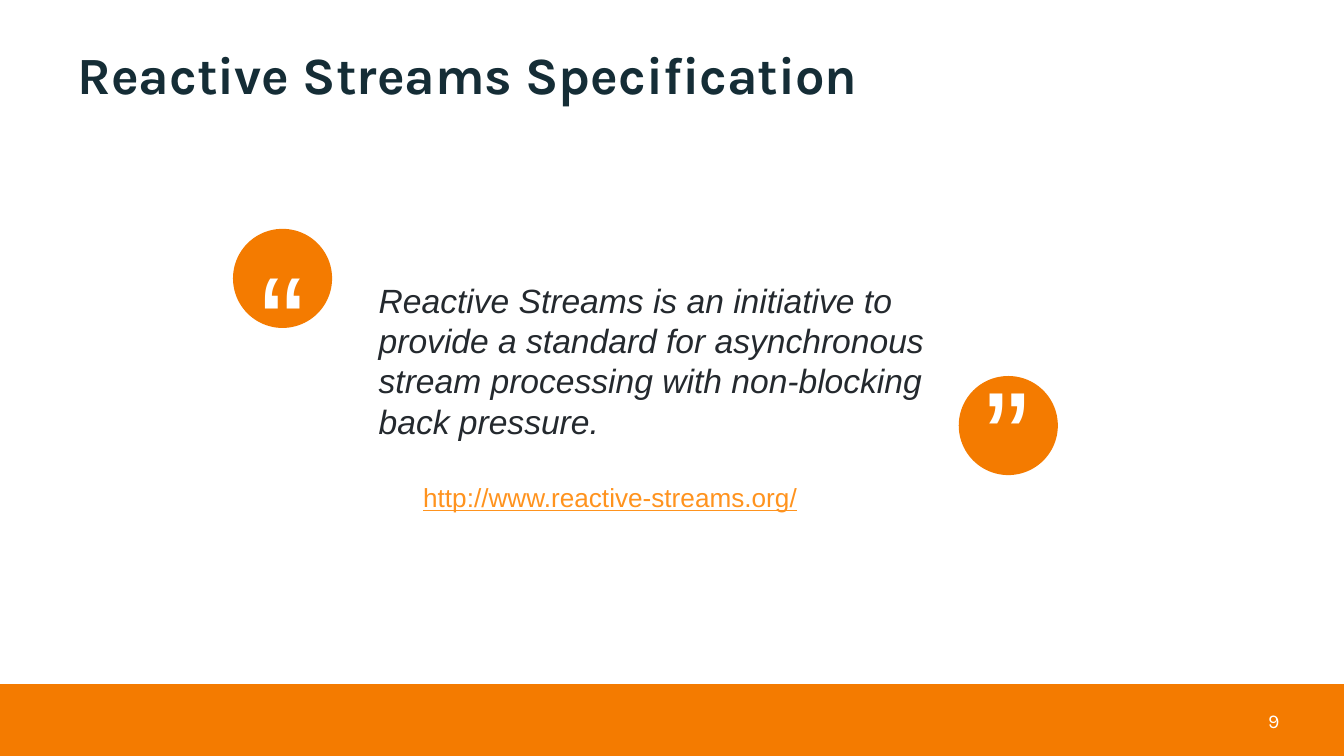
from pptx import Presentation
from pptx.dml.color import RGBColor
from pptx.enum.shapes import MSO_SHAPE
from pptx.enum.text import MSO_ANCHOR, PP_ALIGN
from pptx.util import Pt

RECTANGLE, OVAL = MSO_SHAPE.RECTANGLE, MSO_SHAPE.OVAL
TOP, MIDDLE = MSO_ANCHOR.TOP, MSO_ANCHOR.MIDDLE
LEFT, RIGHT = PP_ALIGN.LEFT, PP_ALIGN.RIGHT

COLORS = {"orange": "F47B00", "navy": "152D36", "ink": "24292E",
          "link": "FF931E", "white": "FFFFFF"}
PAGE_WIDTH, PAGE_HEIGHT = 720, 405
FOOTER_TOP = 366.5
INSET = 7.2
CIRCLE_SIZE = 53.1

# Text, place (left, top, width, height), look
TEXTS = [
    ("Reactive Streams Specification", (34.6, 18, 650.9, 46.8),
     dict(size=28, font="Karla", color="navy", bold=True, anchor=MIDDLE, spacing=0.9)),
    ("9", (523.4, 375.1, 162, 21.6),
     dict(size=10.5, font="Karla", color="white", anchor=MIDDLE, align=RIGHT, inset=0)),
    ("Reactive Streams is an initiative to provide a standard for asynchronous "
     "stream processing with non-blocking back pressure.", (195.8, 142.6, 317.5, 68.4),
     dict(size=18, color="ink", italic=True, spacing=Pt(21.6))),
    ("http://www.reactive-streams.org/", (219.6, 250.6, 222.5, 25.9),
     dict(size=14, color="link", underline=True, spacing=Pt(16.8))),
]

# Circle corner, corner of the mark's box, rotation
QUOTE_MARKS = [
    ((124.8, 122.6), (132.5, 113), 0),
    ((513.6, 201.4), (524.9, 195.1), 180),
]
MARK_BOX = (33.8, 68.4)


def add_filled(slide, kind, place, color):
    shape = slide.shapes.add_shape(kind, *map(Pt, place))
    shape.shadow.inherit = False
    shape.fill.solid()
    shape.fill.fore_color.rgb = RGBColor.from_string(COLORS[color])
    shape.line.fill.background()
    return shape


def add_text(slide, text, place, size, color, font="Arial", bold=False, italic=False,
             underline=False, anchor=TOP, align=LEFT, spacing=1.0, inset=INSET,
             top_inset=None):
    box = slide.shapes.add_textbox(*map(Pt, place))
    frame = box.text_frame
    frame.word_wrap = True
    frame.vertical_anchor = anchor
    frame.margin_left = frame.margin_right = frame.margin_bottom = Pt(inset)
    frame.margin_top = Pt(inset if top_inset is None else top_inset)
    para = frame.paragraphs[0]
    para.alignment = align
    para.line_spacing = spacing
    span = para.add_run()
    span.text = text
    span.font.name = font
    span.font.size = Pt(size)
    span.font.bold = bold
    span.font.italic = italic
    span.font.underline = underline
    span.font.color.rgb = RGBColor.from_string(COLORS[color])
    return box


deck = Presentation()
deck.slide_width, deck.slide_height = Pt(PAGE_WIDTH), Pt(PAGE_HEIGHT)
page = deck.slides.add_slide(deck.slide_layouts[6])

add_filled(page, RECTANGLE, (0, FOOTER_TOP, PAGE_WIDTH, PAGE_HEIGHT - FOOTER_TOP), "orange")
for circle_corner, mark_corner, rotation in QUOTE_MARKS:
    circle = add_filled(page, OVAL, (*circle_corner, CIRCLE_SIZE, CIRCLE_SIZE), "orange")
    mark = add_text(page, "“", (*mark_corner, *MARK_BOX), 72, "white", top_inset=14)
    circle.rotation = mark.rotation = rotation
for text, place, look in TEXTS:
    add_text(page, text, place, **look)

deck.save("out.pptx")
